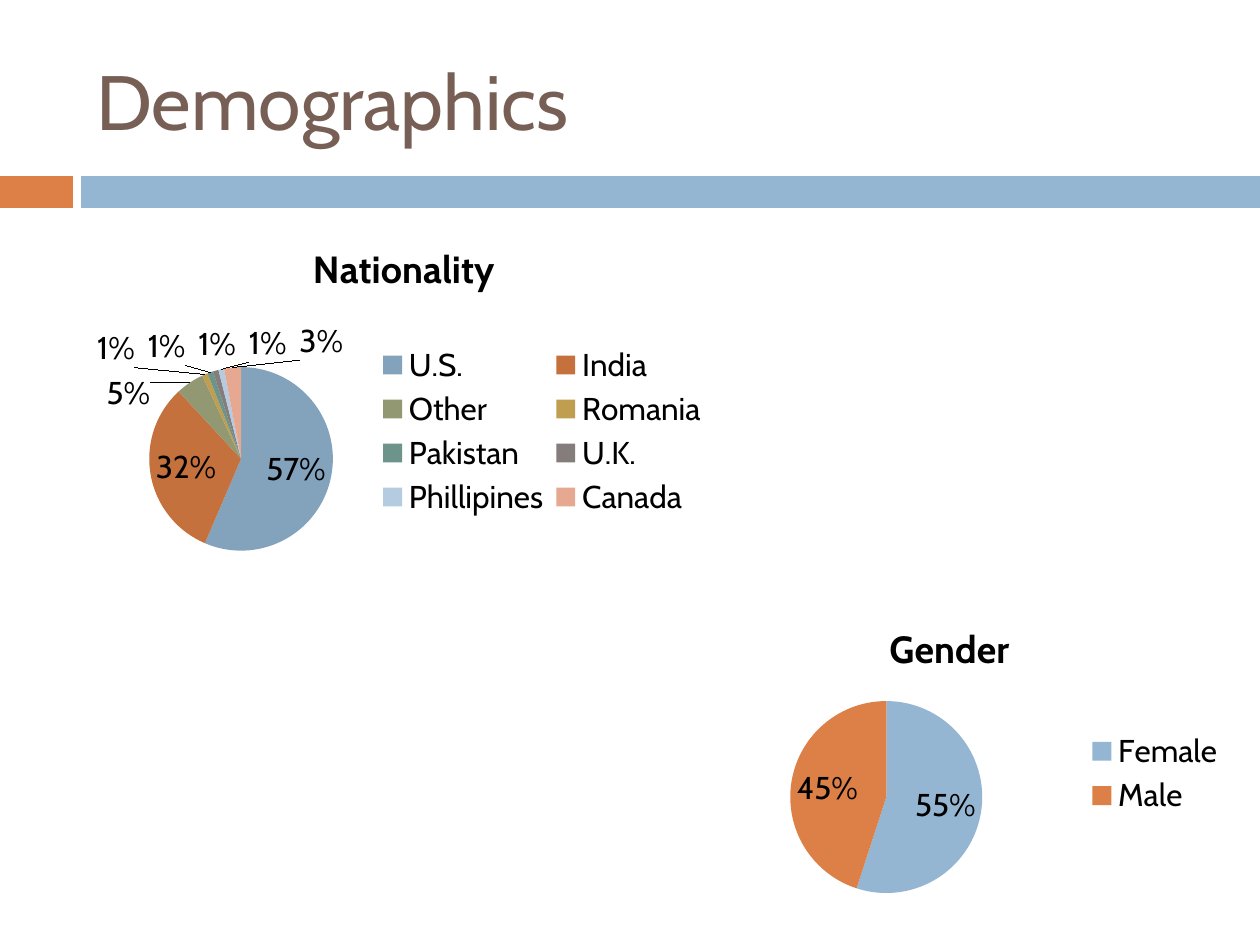
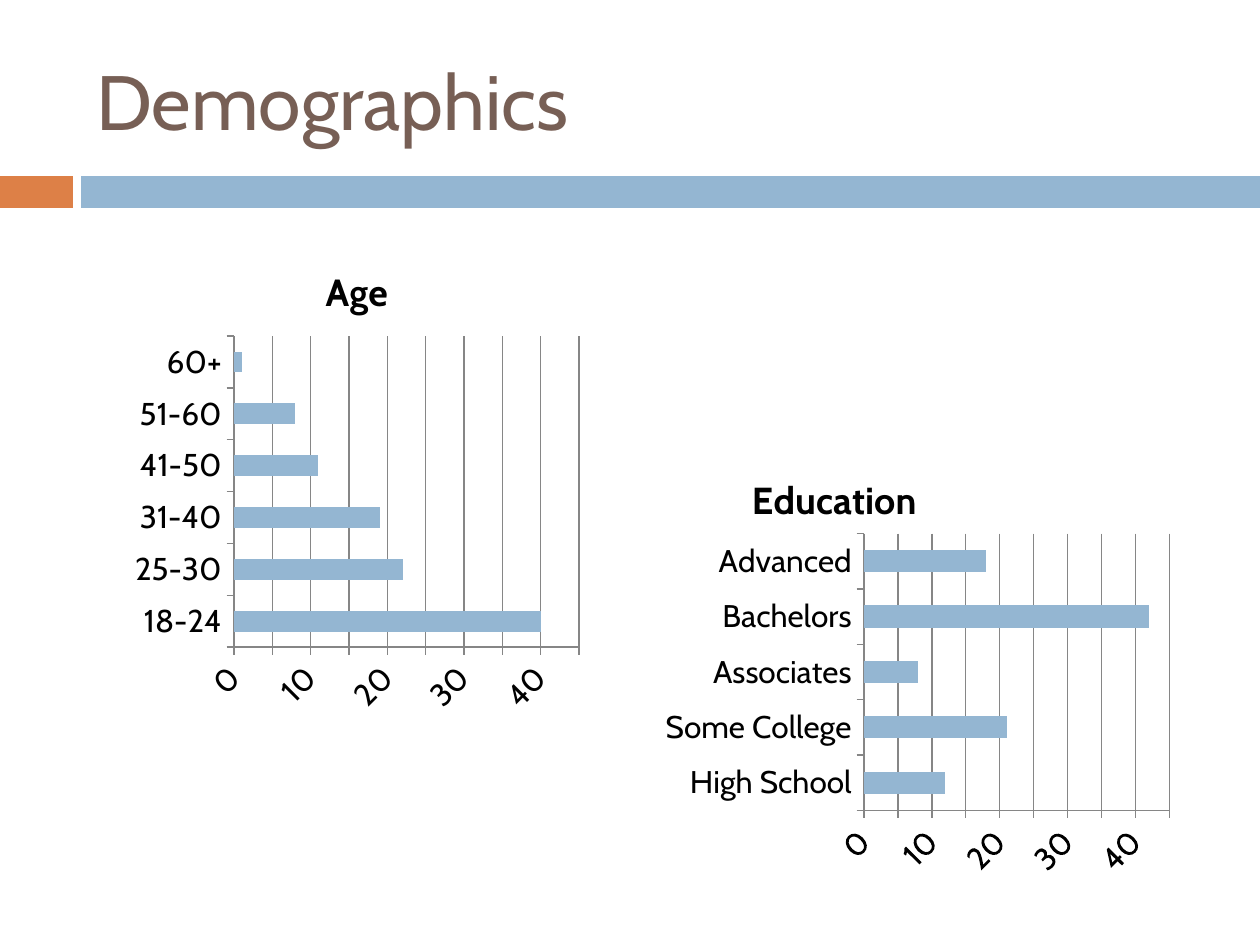
from dataclasses import dataclass
from pptx import Presentation
from pptx.chart.data import CategoryChartData
from pptx.dml.color import RGBColor
from pptx.enum.chart import (XL_CHART_TYPE, XL_LABEL_POSITION,
                             XL_LEGEND_POSITION, XL_TICK_MARK)
from pptx.enum.shapes import MSO_SHAPE
from pptx.enum.text import MSO_ANCHOR
from pptx.oxml import parse_xml
from pptx.oxml.ns import nsdecls
from pptx.util import Emu, Pt


@dataclass(frozen=True)
class Theme:
    font: str = "Cabin"
    heading: str = "775F55"
    ink: str = "000000"
    blue: str = "94B6D2"
    orange: str = "DD8047"
    axis: str = "868686"
    nationality: tuple = ("83A2BC", "C4713E", "929872", "C09E4F",
                          "6C948B", "857C7C", "B4CBE0", "E6A890")
    heading_size: int = 44
    chart_title_size: float = 21.6
    chart_size: int = 18


THEME = Theme()
PX_PER_INCH = 126


def px(length):
    return Emu(round(length * 914400 / PX_PER_INCH))


def rgb(value):
    return RGBColor.from_string(value)


def style_font(font, size, color, bold=False):
    font.name, font.size, font.bold = THEME.font, Pt(size), bold
    font.color.rgb = rgb(color)


# Shared slide frame
def add_band(slide, left, width, color):
    band = slide.shapes.add_shape(MSO_SHAPE.RECTANGLE, px(left), px(176), px(width), px(32))
    band.shadow.inherit = False
    band.fill.solid()
    band.fill.fore_color.rgb = rgb(color)
    band.line.fill.background()


def add_heading(slide, text):
    frame = slide.shapes.add_textbox(px(84), px(32), px(1124), px(136)).text_frame
    frame.word_wrap = True
    frame.vertical_anchor = MSO_ANCHOR.MIDDLE
    run = frame.paragraphs[0].add_run()
    run.text = text
    style_font(run.font, THEME.heading_size, THEME.heading)


def add_framed_slide(deck, heading):
    slide = deck.slides.add_slide(deck.slide_layouts[6])
    add_band(slide, 0, 73, THEME.orange)
    add_band(slide, 81, 1179, THEME.blue)
    add_heading(slide, heading)
    return slide


# Charts: frame and area are (left, top, width, height) on the slide
def layout_xml(frame, area, target=""):
    x, y = (round((area[i] - frame[i]) / frame[i + 2], 3) for i in (0, 1))
    w, h = (round(area[i] / frame[i], 3) for i in (2, 3))
    return parse_xml(
        f'<c:layout {nsdecls("c")}><c:manualLayout>{target}'
        '<c:xMode val="edge"/><c:yMode val="edge"/>'
        f'<c:x val="{x}"/><c:y val="{y}"/><c:w val="{w}"/><c:h val="{h}"/>'
        '</c:manualLayout></c:layout>')


def add_titled_chart(slide, kind, title, values, frame, plot_area):
    data = CategoryChartData()
    data.categories = list(values)
    data.add_series(title, list(values.values()))
    chart = slide.shapes.add_chart(kind, *map(px, frame), data).chart
    style_font(chart.font, THEME.chart_size, THEME.ink)
    chart.has_title = True
    run = chart.chart_title.text_frame.paragraphs[0].add_run()
    run.text = title
    style_font(run.font, THEME.chart_title_size, THEME.ink, bold=True)
    chart.chart_title.include_in_layout = False
    # Fix the inner plot area
    plot = chart.plots[0]._element.getparent()
    for old in plot.xpath("./c:layout"):
        plot.remove(old)
    plot.insert(0, layout_xml(frame, plot_area, '<c:layoutTarget val="inner"/>'))
    return chart


def add_pie(slide, title, values, colors, frame, plot_area, legend_area=None):
    chart = add_titled_chart(slide, XL_CHART_TYPE.PIE, title, values, frame, plot_area)
    chart.plots[0].vary_by_categories = True
    share = chart.plots[0].series[0]
    for index, color in enumerate(colors):
        fill = share.points[index].format.fill
        fill.solid()
        fill.fore_color.rgb = rgb(color)
    labels = share.data_labels
    labels.show_value = True
    labels.number_format, labels.number_format_is_linked = "0%", False
    labels.position = XL_LABEL_POSITION.BEST_FIT
    style_font(labels.font, THEME.chart_size, THEME.ink)
    # Legend
    chart.has_legend = True
    legend = chart.legend
    legend.position = XL_LEGEND_POSITION.RIGHT
    legend.include_in_layout = False
    style_font(legend.font, THEME.chart_size, THEME.ink)
    if legend_area:
        element = legend._element
        for old in element.xpath("./c:layout"):
            element.remove(old)
        element.xpath("./c:legendPos")[0].addnext(layout_xml(frame, legend_area))


def style_line(line):
    line.color.rgb = rgb(THEME.axis)
    line.width = Pt(0.75)


def add_bars(slide, title, values, frame, plot_area):
    chart = add_titled_chart(slide, XL_CHART_TYPE.BAR_CLUSTERED, title, values,
                             frame, plot_area)
    chart.has_legend = False
    bars = chart.plots[0]
    bars.vary_by_categories = False
    bars.gap_width = 150
    fill = bars.series[0].format.fill
    fill.solid()
    fill.fore_color.rgb = rgb(THEME.blue)
    # Axes
    for axis in (chart.category_axis, chart.value_axis):
        axis.major_tick_mark = XL_TICK_MARK.OUTSIDE
        style_font(axis.tick_labels.font, THEME.chart_size, THEME.ink)
        style_line(axis.format.line)
    scale = chart.value_axis
    scale.minimum_scale, scale.maximum_scale, scale.major_unit = 0, 45, 5
    scale.has_major_gridlines = True
    style_line(scale.major_gridlines.format.line)
    scale._element.xpath("./c:txPr/a:bodyPr")[0].set("rot", "-2700000")


def main():
    deck = Presentation()
    deck.slide_width, deck.slide_height = px(1260), px(945)

    # Nationality and gender
    origins = add_framed_slide(deck, "Demographics")
    add_pie(origins, "Nationality",
            {"U.S.": 0.57, "India": 0.32, "Other": 0.05, "Romania": 0.01,
             "Pakistan": 0.01, "U.K.": 0.01, "Phillipines": 0.01, "Canada": 0.03},
            THEME.nationality, (84, 220, 640, 420), (149, 367, 184, 184),
            (370, 340, 344, 182))
    add_pie(origins, "Gender", {"Female": 0.55, "Male": 0.45},
            (THEME.blue, THEME.orange), (661, 602, 577, 343), (790, 701, 192, 192))

    # Age and education
    background = add_framed_slide(deck, "Demographics")
    add_bars(background, "Age",
             {"18-24": 40, "25-30": 22, "31-40": 19, "41-50": 11, "51-60": 8, "60+": 1},
             (126, 242, 462, 483), (234, 336, 345, 311))
    add_bars(background, "Education",
             {"High School": 12, "Some College": 21, "Associates": 8,
              "Bachelors": 42, "Advanced": 18},
             (472, 451, 725, 427), (864, 534, 305, 278))

    deck.save("out.pptx")


if __name__ == "__main__":
    main()
